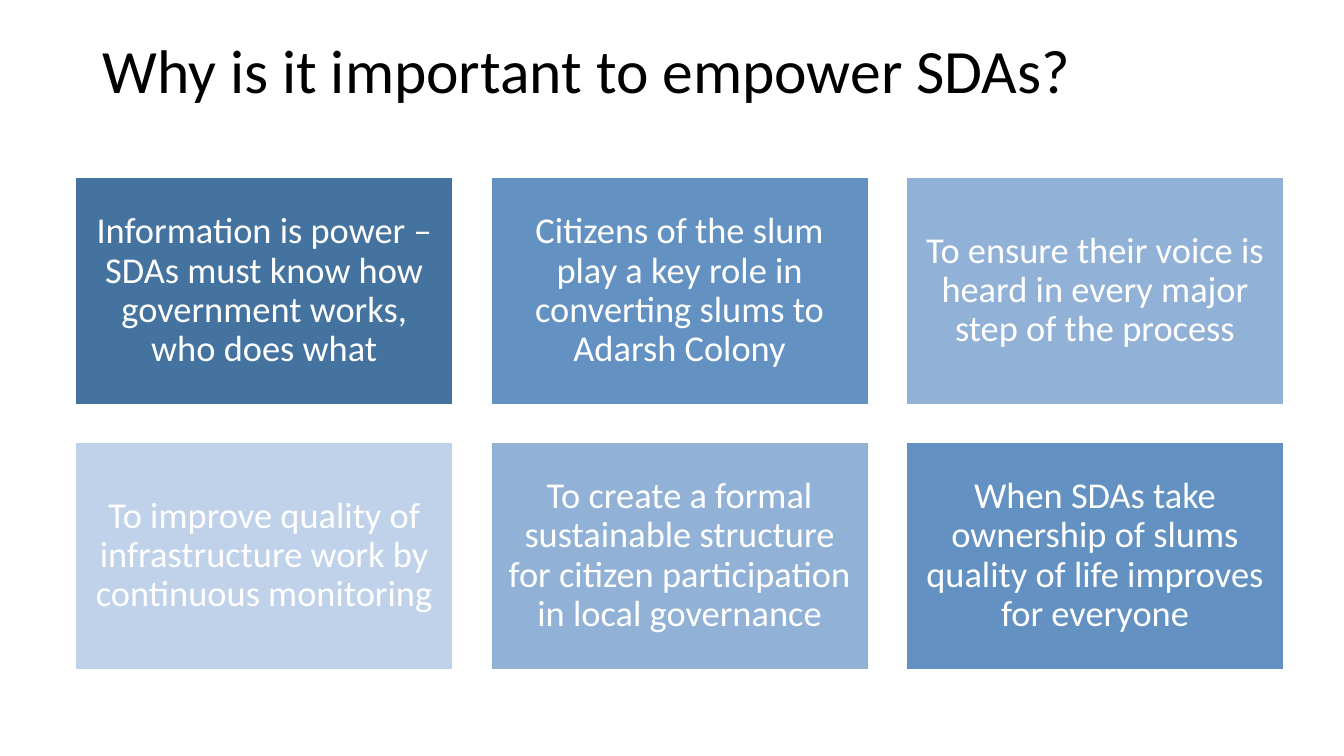
"""Build a slide with a title and a grid of six reasons to empower SDAs."""
from dataclasses import dataclass

import pptx
import pptx.dml.color
import pptx.enum.shapes
import pptx.enum.text
import pptx.util

Pt = pptx.util.Pt
COLORS = {
    "black": "000000",
    "white": "FFFFFF",
    "deep": "43739E",
    "mid": "6391C1",
    "soft": "91B1D6",
    "pale": "C0D2EA",
}
FONT = "Calibri"
COLS = 3
LEFT, TOP = 54, 126.7
WIDTH, HEIGHT = 269.7, 162.2
GAP = 27
INSET = 7.8


@dataclass(frozen=True)
class Card:
    text: str
    fill: str


CARDS = [
    Card("Information is power – SDAs must know how government works, who does what", "deep"),
    Card("Citizens of the slum play a key role in converting slums to Adarsh Colony", "mid"),
    Card("To ensure their voice is heard in every major step of the process", "soft"),
    Card("To improve quality of infrastructure work by continuous monitoring", "pale"),
    Card("To create a formal sustainable structure for citizen participation in local governance", "soft"),
    Card("When SDAs take ownership of slums quality of life improves for everyone", "mid"),
]


def color(name: str) -> pptx.dml.color.RGBColor:
    return pptx.dml.color.RGBColor.from_string(COLORS[name])


def write(shape, text: str, size: float, tint: str, align) -> None:
    frame = shape.text_frame
    frame.text = text
    frame.word_wrap = True
    frame.vertical_anchor = pptx.enum.text.MSO_ANCHOR.MIDDLE
    line = frame.paragraphs[0]
    line.alignment = align
    line.line_spacing = 0.9
    font = line.runs[0].font
    font.name = FONT
    font.size = Pt(size)
    font.color.rgb = color(tint)


def draw(slide, card: Card, index: int) -> None:
    row, col = divmod(index, COLS)
    box = slide.shapes.add_shape(
        pptx.enum.shapes.MSO_SHAPE.RECTANGLE,
        Pt(LEFT + col * (WIDTH + GAP)),
        Pt(TOP + row * (HEIGHT + GAP)),
        Pt(WIDTH),
        Pt(HEIGHT),
    )
    box.shadow.inherit = False
    box.fill.solid()
    box.fill.fore_color.rgb = color(card.fill)
    box.line.color.rgb = color("white")
    box.line.width = Pt(1)
    frame = box.text_frame
    frame.margin_left = frame.margin_right = Pt(INSET)
    frame.margin_top = frame.margin_bottom = Pt(INSET)
    write(box, card.text, 26, "white", pptx.enum.text.PP_ALIGN.CENTER)


def main() -> None:
    deck = pptx.Presentation()
    deck.slide_width, deck.slide_height = Pt(960), Pt(540)
    slide = deck.slides.add_slide(deck.slide_layouts.get_by_name("Title Only"))
    title = slide.shapes.title
    title.left, title.top = Pt(66), Pt(0)
    title.width, title.height = Pt(828), Pt(104.4)
    write(title, "Why is it important to empower SDAs?", 44, "black", pptx.enum.text.PP_ALIGN.LEFT)
    for index, card in enumerate(CARDS):
        draw(slide, card, index)
    deck.save("out.pptx")


if __name__ == "__main__":
    main()
